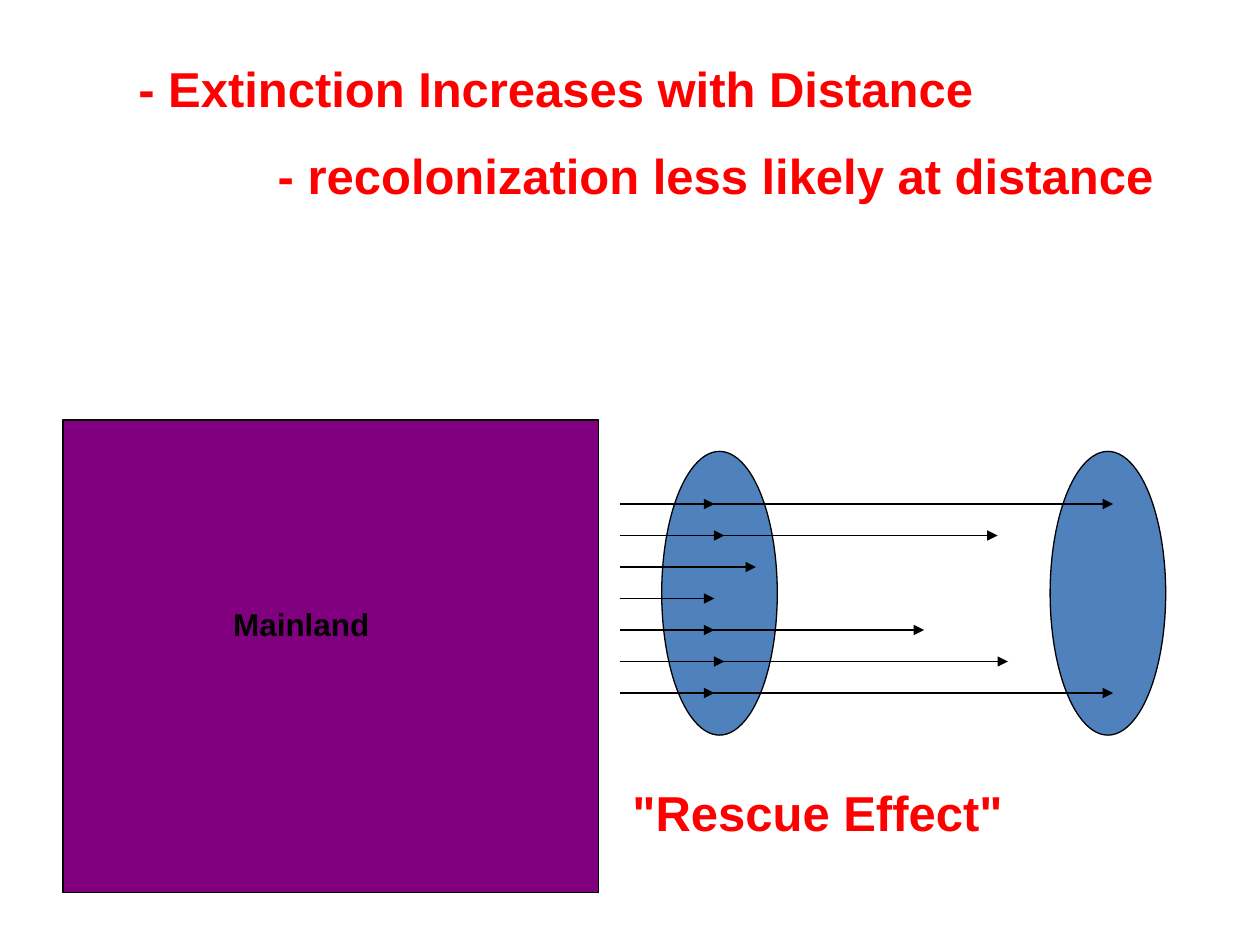
from lxml.etree import SubElement
from pptx import Presentation
from pptx.dml.color import RGBColor
from pptx.enum.shapes import MSO_CONNECTOR, MSO_SHAPE
from pptx.oxml.ns import qn
from pptx.util import Cm, Pt


def color(value):
    return RGBColor.from_string(value)


def add_text(left, top, width, height, lines, size, ink):
    """Each line is a pair of wording and left indent in cm."""
    box = page.shapes.add_textbox(Cm(left), Cm(top), Cm(width), Cm(height))
    frame = box.text_frame
    frame.word_wrap = True
    for index, (wording, indent) in enumerate(lines):
        para = frame.paragraphs[0] if index == 0 else frame.add_paragraph()
        if index:
            para.space_before = Pt(16)
        if indent:
            para._p.get_or_add_pPr().set("marL", str(Cm(indent)))
        span = para.add_run()
        span.text = wording
        span.font.name = "Arial"
        span.font.size = Pt(size)
        span.font.bold = True
        span.font.color.rgb = color(ink)


deck = Presentation()
deck.slide_width, deck.slide_height = Cm(25.4), Cm(19.05)
page = deck.slides.add_slide(deck.slide_layouts[6])

# Mainland, near island and far island
for kind, left, top, width, height, fill in [
    (MSO_SHAPE.RECTANGLE, 1.27, 8.47, 10.8, 9.53, "800080"),
    (MSO_SHAPE.OVAL, 13.34, 9.1, 2.33, 5.72, "4F81BD"),
    (MSO_SHAPE.OVAL, 21.17, 9.1, 2.33, 5.72, "4F81BD"),
]:
    land = page.shapes.add_shape(kind, Cm(left), Cm(top), Cm(width), Cm(height))
    land.shadow.inherit = False
    land.fill.solid()
    land.fill.fore_color.rgb = color(fill)
    land.line.color.rgb = color("000000")
    land.line.width = Pt(0.75)

# Colonists leaving the mainland: arrow ends in each evenly spaced row
start, first_row, last_row = 12.5, 10.16, 13.97
arrow_ends = [
    [22.44, 14.4],
    [20.11, 14.6],
    [15.24],
    [14.4],
    [18.63, 14.4],
    [20.32, 14.6],
    [22.44, 14.4],
]
row_gap = (last_row - first_row) / (len(arrow_ends) - 1)
for row, ends in enumerate(arrow_ends):
    y = Cm(first_row + row * row_gap)
    for end in ends:
        arrow = page.shapes.add_connector(
            MSO_CONNECTOR.STRAIGHT, Cm(start), y, Cm(end), y)
        arrow.line.color.rgb = color("000000")
        arrow.line.width = Pt(0.75)
        SubElement(arrow.line._get_or_add_ln(), qn("a:tailEnd"), type="triangle")
        SubElement(arrow._element.spPr, qn("a:effectLst"))

# Heading and labels
add_text(2.54, 1.06, 22.02, 4.45, [
    ("- Extinction Increases with Distance", 0),
    ("- recolonization less likely at distance", 2.81),
], 28, "FF0000")
add_text(4.45, 12.07, 6.35, 1.02, [("Mainland", 0)], 18, "000000")
add_text(12.5, 15.66, 11.64, 1.45, [('"Rescue Effect"', 0)], 28, "FF0000")

deck.save("out.pptx")
